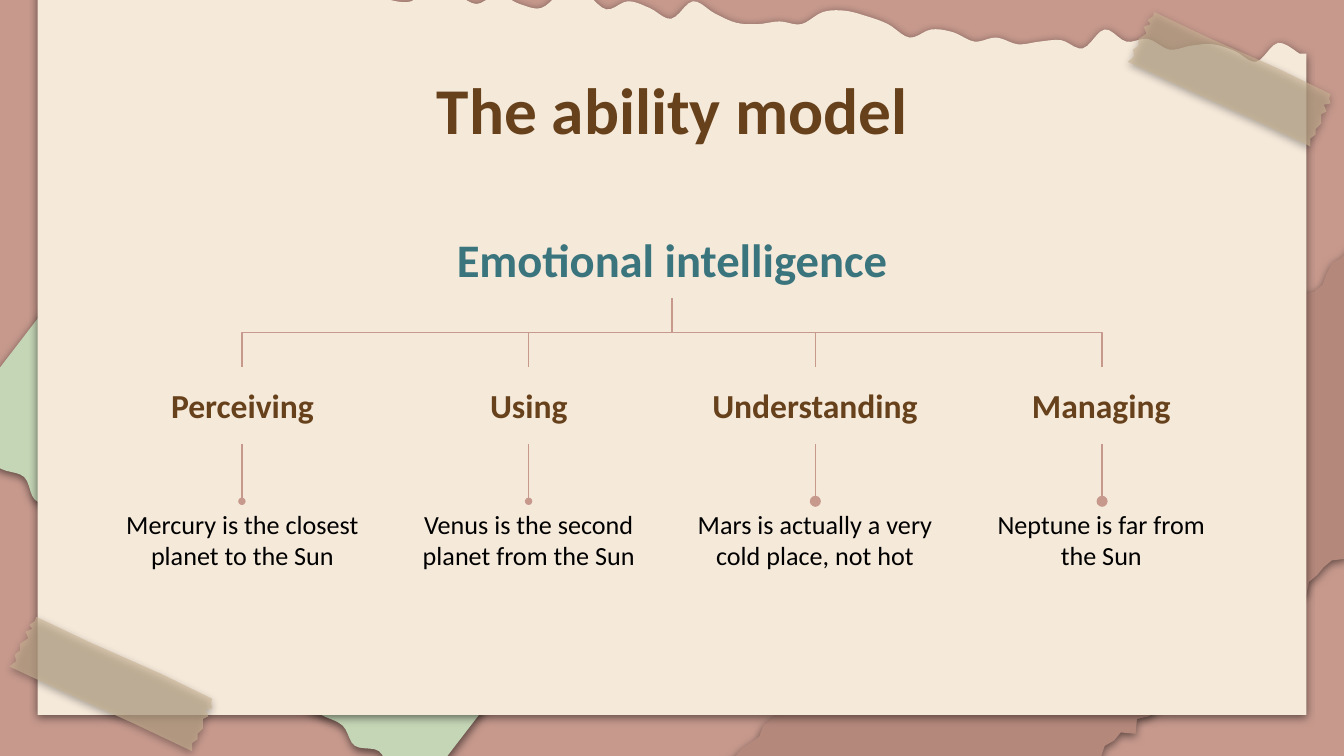
from lxml import etree
from pptx import Presentation
from pptx import util as u
from pptx.dml import color
from pptx.enum import shapes, text
from pptx.oxml import ns

theme = {
    "font": "Calibri",
    "rose": "C7998D", "green": "C5D6B6", "clay": "B5887C",
    "paper": "F5E9DA", "tape": "CAB494",
    "brown": "66411B", "teal": "3A757E", "black": "000000",
    "title": 35, "root": 25, "heading": 18, "body": 14,
}

deck = Presentation()
deck.slide_width = u.Inches(10)
deck.slide_height = u.Inches(10 * 9 / 16)
page = deck.slides.add_slide(deck.slide_layouts[5])
page.background.fill.solid()
page.background.fill.fore_color.rgb = color.RGBColor.from_string(theme["rose"])


def cut_out(edge, corners, fill, smooth=False, alpha=None):
    """Draw a paper piece with a torn edge, straight corners and a soft shadow."""
    points = list(edge)
    if smooth:  # Catmull-Rom curve through the edge points
        padded = [edge[0], *edge, edge[-1]]
        points = []
        for a, b, c, d in zip(padded, padded[1:], padded[2:], padded[3:]):
            for t in (0, 0.2, 0.4, 0.6, 0.8):
                points.append(tuple(
                    q + t * (r - p) / 2
                    + t ** 2 * (2 * p - 5 * q + 4 * r - s) / 2
                    + t ** 3 * (3 * q - p - 3 * r + s) / 2
                    for p, q, r, s in zip(a, b, c, d)))
        points.append(edge[-1])
    # The builder rounds to whole units, so it is given EMU
    points = [(u.Inches(x), u.Inches(y)) for x, y in points + corners]
    builder = page.shapes.build_freeform(*points[0])
    builder.add_line_segments(points[1:], close=True)
    piece = builder.convert_to_shape()
    piece.fill.solid()
    piece.fill.fore_color.rgb = color.RGBColor.from_string(theme[fill])
    piece.line.fill.background()
    if alpha:
        tint = piece._element.spPr.find(".//" + ns.qn("a:srgbClr"))
        etree.SubElement(tint, ns.qn("a:alpha"), val=str(alpha * 1000))
    piece.shadow.inherit = False
    effects = piece._element.spPr.find(ns.qn("a:effectLst"))
    shadow = etree.SubElement(effects, ns.qn("a:outerShdw"), blurRad=str(u.Pt(4.5)),
                              dist=str(u.Pt(1.5)), dir="5400000", rotWithShape="0")
    shade = etree.SubElement(shadow, ns.qn("a:srgbClr"), val=theme["black"])
    etree.SubElement(shade, ns.qn("a:alpha"), val="50000")


def write(words, left, top, width, height, size, ink="brown", bold=True, box=None):
    """Put centred text in a new text box, or in the box given."""
    place = [u.Inches(n) for n in (left, top, width, height)]
    if box is None:
        box = page.shapes.add_textbox(*place)
    box.left, box.top, box.width, box.height = place
    frame = box.text_frame
    frame.word_wrap = True
    frame.auto_size = text.MSO_AUTO_SIZE.NONE
    frame.vertical_anchor = text.MSO_ANCHOR.MIDDLE
    frame.margin_left = frame.margin_right = u.Inches(0.1)
    frame.margin_top = frame.margin_bottom = u.Inches(0.1)
    para = frame.paragraphs[0]
    para.alignment = text.PP_ALIGN.CENTER
    span = para.add_run()
    span.text = words
    span.font.name, span.font.size = theme["font"], u.Pt(theme[size])
    span.font.bold = bold
    span.font.color.rgb = color.RGBColor.from_string(theme[ink])


# Green scrap, lower left
green_edge = [
    (-0.38, 3.23), (-0.26, 3.29), (-0.13, 3.39), (0.01, 3.49), (0.18, 3.55), (0.26, 3.72),
    (0.42, 3.78), (0.53, 3.92), (0.66, 4.02), (0.84, 4.06), (0.92, 4.23), (1.1, 4.27),
    (1.21, 4.39), (1.32, 4.53), (1.49, 4.58), (1.62, 4.69), (1.74, 4.81), (1.88, 4.9),
    (1.99, 5.03), (2.15, 5.1), (2.25, 5.24), (2.39, 5.32), (2.55, 5.4), (2.64, 5.55),
    (2.82, 5.59), (2.91, 5.75), (3.04, 5.85), (3.11, 5.91)]
cut_out(green_edge, [(3.84, 4.96), (0.35, 2.28)], "green", smooth=True)

# Clay scrap, lower right
clay_edge = [
    (8.5, 3.07), (5.92, 5.32), (5.81, 5.31), (5.74, 5.35), (5.68, 5.4), (5.65, 5.48),
    (5.58, 5.53), (5.52, 5.57), (5.47, 5.63), (5.3, 5.72), (6.42, 7.08), (6.64, 6.94),
    (7.93, 5.81), (7.99, 5.75), (8.06, 5.72), (8.12, 5.67), (8.19, 5.64), (8.22, 5.55),
    (8.29, 5.51), (8.34, 5.45), (8.45, 5.46), (8.46, 5.35), (8.55, 5.33), (8.61, 5.28),
    (9.6, 4.41), (9.72, 4.43), (9.74, 4.33), (9.8, 4.28), (9.85, 4.22), (9.91, 4.17),
    (10, 4.16), (10.05, 4.09), (11.14, 3.2), (10.05, 1.84), (9.98, 1.92), (9.91, 1.96),
    (9.87, 2.04), (9.84, 2.12), (9.78, 2.17), (9.69, 2.19), (9.62, 2.22)]
cut_out(clay_edge, [], "clay")

# Paper sheet with an evenly stepped torn top
torn_heights = [
    -0.21, -0.34, -0.3, -0.21, -0.18, -0.25, -0.2, -0.17, -0.15, -0.25, -0.07, -0.22,
    -0.05, -0.15, -0.06, -0.05, 0, 0.01, -0.1, -0.05, 0.03, -0.04, 0.03, 0.06,
    -0.06, -0.05, 0.07, 0.01, 0.06, 0.14, 0.01, 0.1, 0.17, 0.18, 0.16, 0.18,
    0.09, 0.08, 0.12, 0.18, 0.28, 0.22, 0.24, 0.31, 0.28, 0.33, 0.31, 0.3,
    0.36, 0.22, 0.31, 0.29, 0.37, 0.34, 0.33, 0.38, 0.46, 0.32, 0.4]
step = (9.67 - 0.32) / (len(torn_heights) - 1)
torn_top = [(0.32 + i * step, height) for i, height in enumerate(torn_heights)]
cut_out(torn_top, [(9.72, 0.4), (9.72, 5.32), (0.28, 5.32), (0.28, -0.22)],
        "paper", smooth=True)

# Two strips of tape
strip = [
    (8.56, 0.18), (8.54, 0.15), (8.58, 0.12), (8.59, 0.09), (8.99, 0.28), (9.51, 0.51),
    (9.9, 0.7), (9.89, 0.73), (9.9, 0.77), (9.85, 0.78), (9.87, 0.83), (9.83, 0.85),
    (9.83, 0.92), (9.79, 0.96), (9.79, 1), (9.75, 1.03), (9.75, 1.09), (9.33, 0.89),
    (8.82, 0.66), (8.39, 0.46), (8.44, 0.42), (8.43, 0.37), (8.47, 0.34), (8.47, 0.29),
    (8.53, 0.25), (8.51, 0.2)]
for shift_x, shift_y in ((0, 0), (-8.32, 4.5)):
    cut_out([(x + shift_x, y + shift_y) for x, y in strip], [], "tape", alpha=61)

# Title, lifted above the paper, and root of the tree
title = page.shapes.title
page.shapes._spTree.append(title._element)
write("The ability model", 0.79, 0.49, 8.43, 0.63, "title", box=title)
write("Emotional intelligence", 2.83, 1.64, 4.34, 0.57, "root", ink="teal")

# Branches: heading, text, elbow from the root and drop to the text
branches = [
    ("Perceiving", "Mercury is the closest planet to the Sun", "sm"),
    ("Using", "Venus is the second planet from the Sun", "sm"),
    ("Understanding", "Mars is actually a very cold place, not hot", "med"),
    ("Managing", "Neptune is far from the Sun", "med"),
]
root_x, root_y, heading_y = 5, 2.22, 2.73
rise, middle_y = heading_y - root_y, (root_y + heading_y) / 2
for i, (heading, body, dot) in enumerate(branches):
    left = 0.79 + 2.13 * i
    center = 1.8 + 3.2 * 2 / 3 * i
    write(heading, left, heading_y, 2.03, 0.57, "heading")
    write(body, left, 3.73, 2.03, 0.57, "body", ink="black", bold=False)

    # The elbow is laid out sideways and turned, so it leaves the root downwards
    run, middle_x = abs(center - root_x), (center + root_x) / 2
    side = 1 if center < root_x else -1
    elbow = page.shapes.add_connector(
        shapes.MSO_CONNECTOR.ELBOW,
        u.Inches(middle_x - side * rise / 2), u.Inches(middle_y - run / 2),
        u.Inches(middle_x + side * rise / 2), u.Inches(middle_y + run / 2))
    elbow._element.spPr.find(ns.qn("a:xfrm")).set("rot", str((180 - side * 90) * 60000))
    drop = page.shapes.add_connector(
        shapes.MSO_CONNECTOR.STRAIGHT,
        u.Inches(center), u.Inches(3.3), u.Inches(center), u.Inches(3.73))
    for line in (elbow, drop):
        line.line.color.rgb = color.RGBColor.from_string(theme["rose"])
        line.line.width = u.Pt(0.75)
        etree.SubElement(line._element.spPr, ns.qn("a:effectLst"))
    etree.SubElement(drop.line._get_or_add_ln(), ns.qn("a:tailEnd"),
                     type="oval", w=dot, len=dot)

deck.save("out.pptx")
